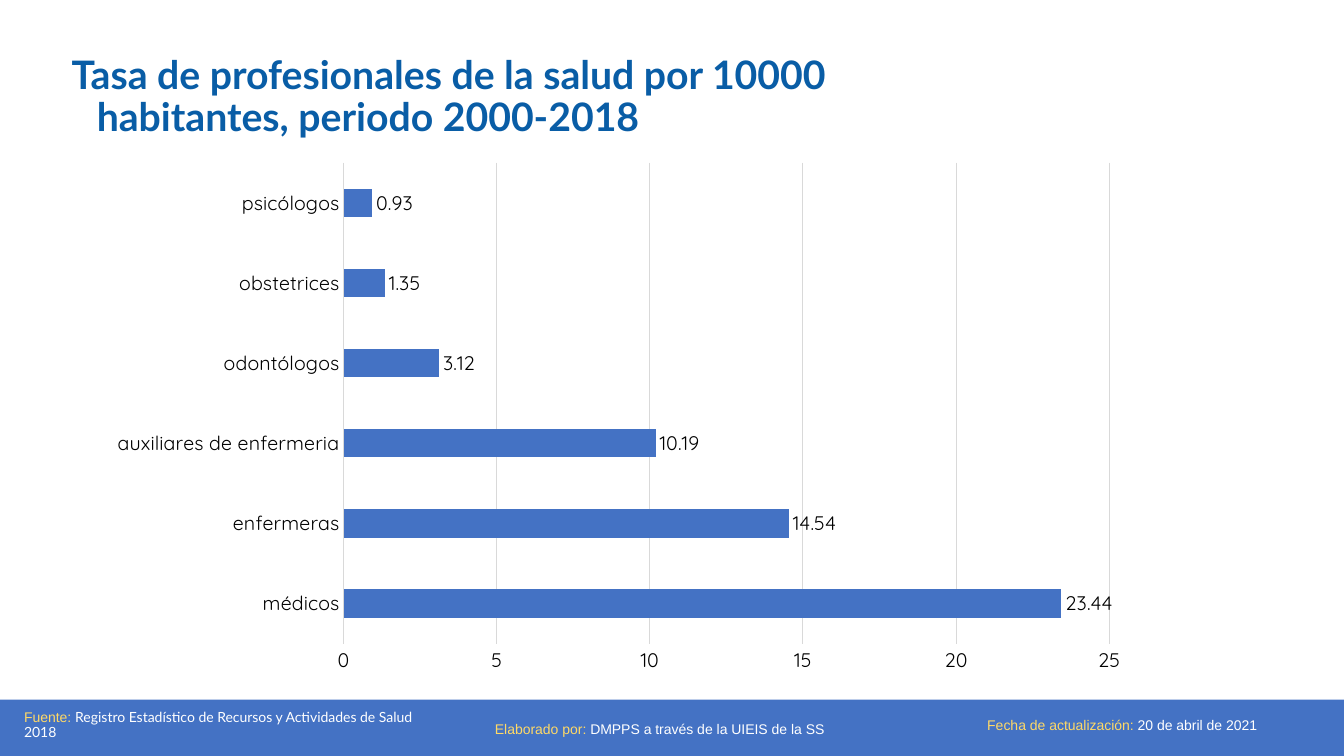
from lxml import etree
from pptx import Presentation
from pptx.chart.data import CategoryChartData
from pptx.dml.color import RGBColor
from pptx.enum.chart import XL_CHART_TYPE, XL_LABEL_POSITION, XL_TICK_MARK
from pptx.enum.shapes import MSO_SHAPE
from pptx.enum.text import MSO_ANCHOR, PP_ALIGN
from pptx.util import Inches, Pt

BAR = XL_CHART_TYPE.BAR_CLUSTERED
OUTSIDE = XL_LABEL_POSITION.OUTSIDE_END
NO_TICK = XL_TICK_MARK.NONE
RECT = MSO_SHAPE.RECTANGLE
TOP, MIDDLE = MSO_ANCHOR.TOP, MSO_ANCHOR.MIDDLE
LEFT, CENTER = PP_ALIGN.LEFT, PP_ALIGN.CENTER

BLUE, TITLE_BLUE, YELLOW = "4472C4", "095DA6", "FFD966"
WHITE, BLACK, GRAY = "FFFFFF", "000000", "D9D9D9"

TITLE = "Tasa de profesionales de la salud por 10000 habitantes, periodo 2000-2018"
RATES = {
    "médicos": 23.44,
    "enfermeras": 14.54,
    "auxiliares de enfermeria": 10.19,
    "odontólogos": 3.12,
    "obstetrices": 1.35,
    "psicólogos": 0.93,
}
FOOTER = [
    ("Fuente: ", "Registro Estadístico de Recursos y Actividades de Salud 2018",
     "Lato", (0.14, 7, 4.32, 0.4), LEFT, False),
    ("Elaborado por: ", "DMPPS a través de la UIEIS de la SS",
     "Arial", (4.81, 7.04, 4.32, 0.4), LEFT, True),
    ("Fecha de actualización: ", "20 de abril de 2021",
     "Arial", (9.25, 6.93, 3.76, 0.55), CENTER, True),
]


def rgb(color):
    return RGBColor.from_string(color)


def box(values):
    return [Inches(v) for v in values]


def set_font(font, name, size, color, bold=False):
    font.name, font.size, font.bold = name, Pt(size), bold
    font.color.rgb = rgb(color)


def set_line(line, color):
    line.color.rgb = rgb(color)
    line.width = Pt(0.75)


def format_paragraph(p, align, hanging):
    p.alignment = align
    p.line_spacing = 0.9
    p.space_before = Pt(0)
    pPr = p._p.get_or_add_pPr()
    indent = Inches(0.25) if hanging else 0
    pPr.set("marL", str(indent))
    pPr.set("indent", str(-indent))


def add_title(slide):
    sp = slide.shapes.title
    sp.left, sp.top, sp.width, sp.height = box((0.61, 0.5, 9.6, 0.95))
    sp.fill.solid()
    sp.fill.fore_color.rgb = rgb(WHITE)
    set_line(sp.line, WHITE)
    tf = sp.text_frame
    tf.text = TITLE
    tf.word_wrap = True
    tf.vertical_anchor = TOP
    p = tf.paragraphs[0]
    format_paragraph(p, LEFT, True)
    set_font(p.font, "Lato", 28, TITLE_BLUE, True)


def add_footer(slide):
    band = slide.shapes.add_shape(RECT, *box((0, 6.94, 13.33, 0.56)))
    band.shadow.inherit = False
    band.fill.solid()
    band.fill.fore_color.rgb = rgb(BLUE)
    band.line.fill.background()
    for label, text, font, place, align, hanging in FOOTER:
        tf = slide.shapes.add_textbox(*box(place)).text_frame
        tf.word_wrap = True
        tf.vertical_anchor = MIDDLE
        p = tf.paragraphs[0]
        format_paragraph(p, align, hanging)
        for words, name, color in ((label, "Arial", YELLOW), (text, font, WHITE)):
            r = p.add_run()
            r.text = words
            set_font(r.font, name, 10, color)


def add_rates_chart(slide):
    data = CategoryChartData()
    data.categories = list(RATES)
    data.add_series("Series 1", list(RATES.values()))
    chart = slide.shapes.add_chart(BAR, *box((0.96, 1.51, 10.36, 5.27)), data).chart
    chart.has_legend = False
    chart.has_title = False
    set_font(chart.font, "Quicksand", 14, BLACK)

    cat, val = chart.category_axis, chart.value_axis
    for axis in (cat, val):
        axis.major_tick_mark = axis.minor_tick_mark = NO_TICK
        set_font(axis.tick_labels.font, "Quicksand", 14, BLACK)
    cat.has_major_gridlines = False
    set_line(cat.format.line, GRAY)
    val.minimum_scale, val.maximum_scale, val.major_unit = 0, 25, 5
    val.has_major_gridlines = True
    set_line(val.major_gridlines.format.line, GRAY)
    val.format.line.fill.background()

    plot = chart.plots[0]
    plot.gap_width = 182
    plot.vary_by_categories = False
    fill = plot.series[0].format.fill
    fill.solid()
    fill.fore_color.rgb = rgb(BLUE)
    plot.has_data_labels = True
    labels = plot.data_labels
    labels.show_value = True
    labels.position = OUTSIDE
    set_font(labels.font, "Quicksand", 14, BLACK)


def main():
    prs = Presentation()
    prs.slide_width, prs.slide_height = box((13.33, 7.5))
    slide = prs.slides.add_slide(prs.slide_layouts[5])
    add_footer(slide)
    add_title(slide)
    add_rates_chart(slide)
    prs.save("out.pptx")


if __name__ == "__main__":
    main()
